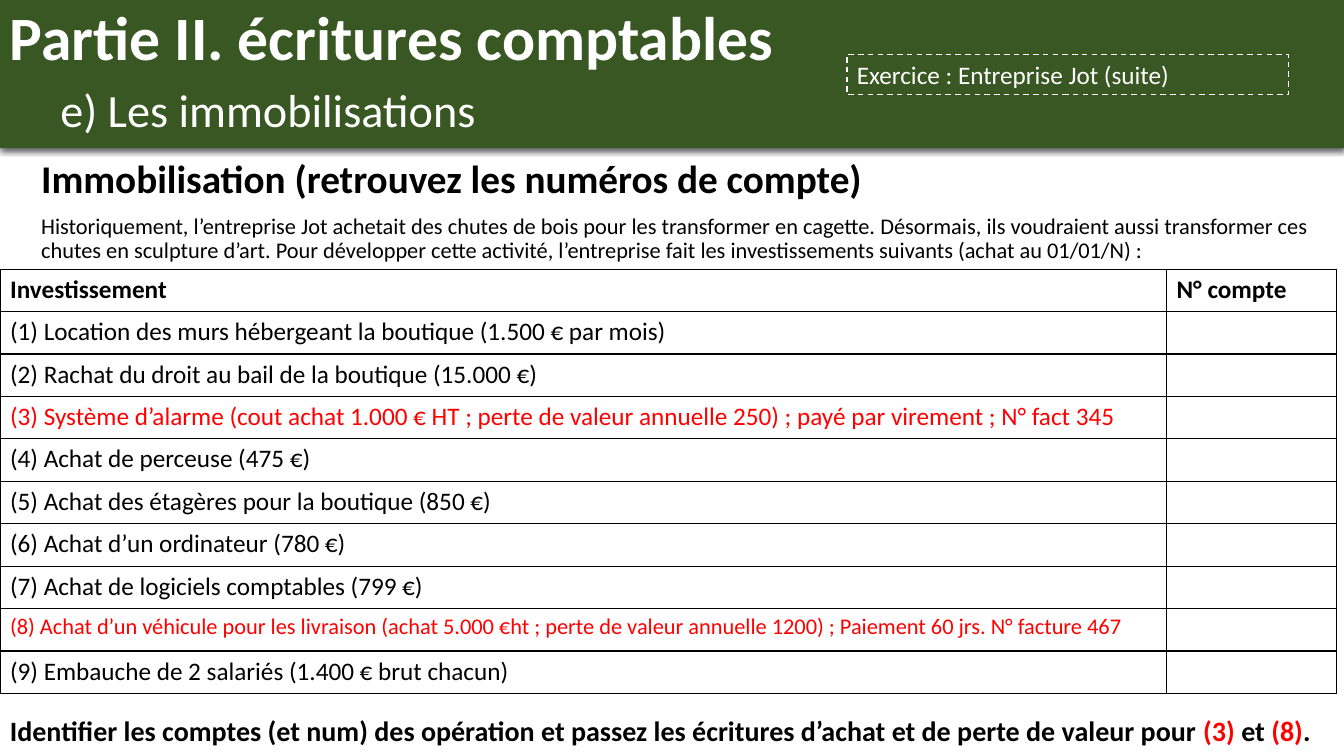
import dataclasses
import typing

import lxml.etree
import pptx
import pptx.dml.color
import pptx.enum.dml
import pptx.enum.shapes
import pptx.enum.text
import pptx.oxml
import pptx.oxml.ns
import pptx.util

Inches = pptx.util.Inches
Pt = pptx.util.Pt
ALIGN = pptx.enum.text.PP_ALIGN
ANCHOR = pptx.enum.text.MSO_ANCHOR

COLORS = {"green": "385723", "white": "FFFFFF", "black": "000000", "red": "FF0000"}
ROW_HEIGHT = 0.421
COLUMN_WIDTHS = (11.57, 1.69)


@dataclasses.dataclass
class Investment:
    label: str
    color: str = "black"
    size: float = 18


INVESTMENTS = [
    Investment("Location des murs hébergeant la boutique (1.500 € par mois)"),
    Investment("Rachat du droit au bail de la boutique (15.000 €)"),
    Investment("Système d’alarme (cout achat 1.000 € HT ; perte de valeur annuelle 250) ; "
               "payé par virement ; N° fact 345", "red"),
    Investment("Achat de perceuse (475 €)"),
    Investment("Achat des étagères pour la boutique (850 €)"),
    Investment("Achat d’un ordinateur (780 €)"),
    Investment("Achat de logiciels comptables (799 €)"),
    Investment("Achat d’un véhicule pour les livraison (achat 5.000 €ht ; perte de valeur "
               "annuelle 1200) ; Paiement 60 jrs. N° facture 467", "red", 16),
    Investment("Embauche de 2 salariés (1.400 € brut chacun)"),
]


def rgb(name: str) -> pptx.dml.color.RGBColor:
    return pptx.dml.color.RGBColor.from_string(COLORS[name])


def add_text(p: typing.Any, text: str, *, size: float = 18, color: str = "black",
             bold: bool = False) -> None:
    r = p.add_run()
    r.text = text
    r.font.name = "Calibri"
    r.font.size = Pt(size)
    r.font.bold = bold
    r.font.color.rgb = rgb(color)


def format_paragraph(p: typing.Any, align: ALIGN = ALIGN.LEFT, before: float = 0) -> None:
    p.alignment = align
    p.line_spacing = 0.9
    p.space_before = Pt(before)


def add_rect(s: typing.Any, left: float, top: float, width: float, height: float) -> typing.Any:
    sp = s.shapes.add_shape(pptx.enum.shapes.MSO_SHAPE.RECTANGLE,
                            Inches(left), Inches(top), Inches(width), Inches(height))
    sp.shadow.inherit = False
    sp.text_frame.word_wrap = True
    return sp


def add_box(s: typing.Any, left: float, top: float, width: float, height: float) -> typing.Any:
    tf = s.shapes.add_textbox(Inches(left), Inches(top), Inches(width), Inches(height)).text_frame
    tf.word_wrap = True
    return tf


def add_shadow(sp: typing.Any) -> None:
    effects = sp._element.spPr.find(pptx.oxml.ns.qn("a:effectLst"))
    effects.append(pptx.oxml.parse_xml(
        f'<a:outerShdw {pptx.oxml.ns.nsdecls("a")} blurRad="{Pt(4.5)}" dist="{Pt(1.5)}" '
        f'dir="5400000" rotWithShape="0"><a:srgbClr val="{COLORS["black"]}">'
        '<a:alpha val="63000"/></a:srgbClr></a:outerShdw>'))


def fill_cell(cell: typing.Any, text: str = "", **fmt: typing.Any) -> None:
    if text:
        add_text(cell.text_frame.paragraphs[0], text, **fmt)
    cell.fill.background()
    props = cell._tc.get_or_add_tcPr()
    for i, side in enumerate(("lnL", "lnR", "lnT", "lnB")):
        props.insert(i, pptx.oxml.parse_xml(
            f'<a:{side} {pptx.oxml.ns.nsdecls("a")} w="{Pt(1)}"><a:solidFill>'
            f'<a:srgbClr val="{COLORS["black"]}"/></a:solidFill></a:{side}>'))


def add_header(s: typing.Any) -> None:
    sp = add_rect(s, 0, 0, 13.33, 1.47)
    sp.fill.solid()
    sp.fill.fore_color.rgb = rgb("green")
    sp.line.fill.background()
    add_shadow(sp)
    sp.text_frame.vertical_anchor = ANCHOR.MIDDLE
    p = sp.text_frame.paragraphs[0]
    format_paragraph(p)
    add_text(p, "Partie II. écritures comptables", size=44, color="white", bold=True)
    p.add_line_break()
    add_text(p, "\t", size=44, color="white", bold=True)
    add_text(p, "e) Les immobilisations", size=33, color="white")


def add_exercise_label(s: typing.Any) -> None:
    sp = add_rect(s, 8.4, 0.54, 4.38, 0.4)
    sp.fill.background()
    sp.line.color.rgb = rgb("white")
    sp.line.width = Pt(1)
    sp.line.dash_style = pptx.enum.dml.MSO_LINE.DASH
    sp.text_frame.vertical_anchor = ANCHOR.TOP
    p = sp.text_frame.paragraphs[0]
    p.alignment = ALIGN.LEFT
    add_text(p, "Exercice : Entreprise Jot (suite)", color="white")


def add_intro(s: typing.Any) -> None:
    tf = add_box(s, 0.31, 1.53, 12.77, 1.14)
    p = tf.paragraphs[0]
    format_paragraph(p, before=10)
    add_text(p, "Immobilisation (retrouvez les numéros de compte)", size=28, bold=True)
    p = tf.add_paragraph()
    format_paragraph(p, ALIGN.JUSTIFY, 10)
    add_text(p, "Historiquement, l’entreprise Jot achetait des chutes de bois pour les transformer "
                "en cagette. Désormais, ils voudraient aussi transformer ces chutes en sculpture "
                "d’art. Pour développer cette activité, l’entreprise fait les investissements "
                "suivants (achat au 01/01/N) : ", size=16)


def add_investments(s: typing.Any) -> None:
    rows = len(INVESTMENTS) + 1
    table = s.shapes.add_table(rows, len(COLUMN_WIDTHS), Inches(0), Inches(2.67),
                               Inches(sum(COLUMN_WIDTHS)), Inches(rows * ROW_HEIGHT)).table
    table.horz_banding = False
    table.first_row = False
    for column, width in zip(table.columns, COLUMN_WIDTHS):
        column.width = Inches(width)
    for column, title in enumerate(("Investissement", "N° compte")):
        fill_cell(table.cell(0, column), title, bold=True)
    for row, item in enumerate(INVESTMENTS, 1):
        fill_cell(table.cell(row, 0), f"({row}) {item.label}", size=item.size, color=item.color)
        fill_cell(table.cell(row, 1))


def add_instruction(s: typing.Any) -> None:
    p = add_box(s, 0, 7.03, 13.33, 0.44).paragraphs[0]
    for text, color in (
        ("Identifier les comptes (et num) des opération et passez les écritures d’achat "
         "et de perte de valeur pour ", "black"),
        ("(3)", "red"), (" et ", "black"), ("(8)", "red"), (".", "black"),
    ):
        add_text(p, text, size=20, color=color, bold=True)


def main() -> None:
    prs = pptx.Presentation()
    prs.slide_width, prs.slide_height = Inches(13.33), Inches(7.5)
    s = prs.slides.add_slide(prs.slide_layouts[6])

    # Heading band and introduction
    add_header(s)
    add_intro(s)
    add_exercise_label(s)

    # Table of investments and closing question
    add_investments(s)
    add_instruction(s)
    prs.save("out.pptx")


if __name__ == "__main__":
    main()
